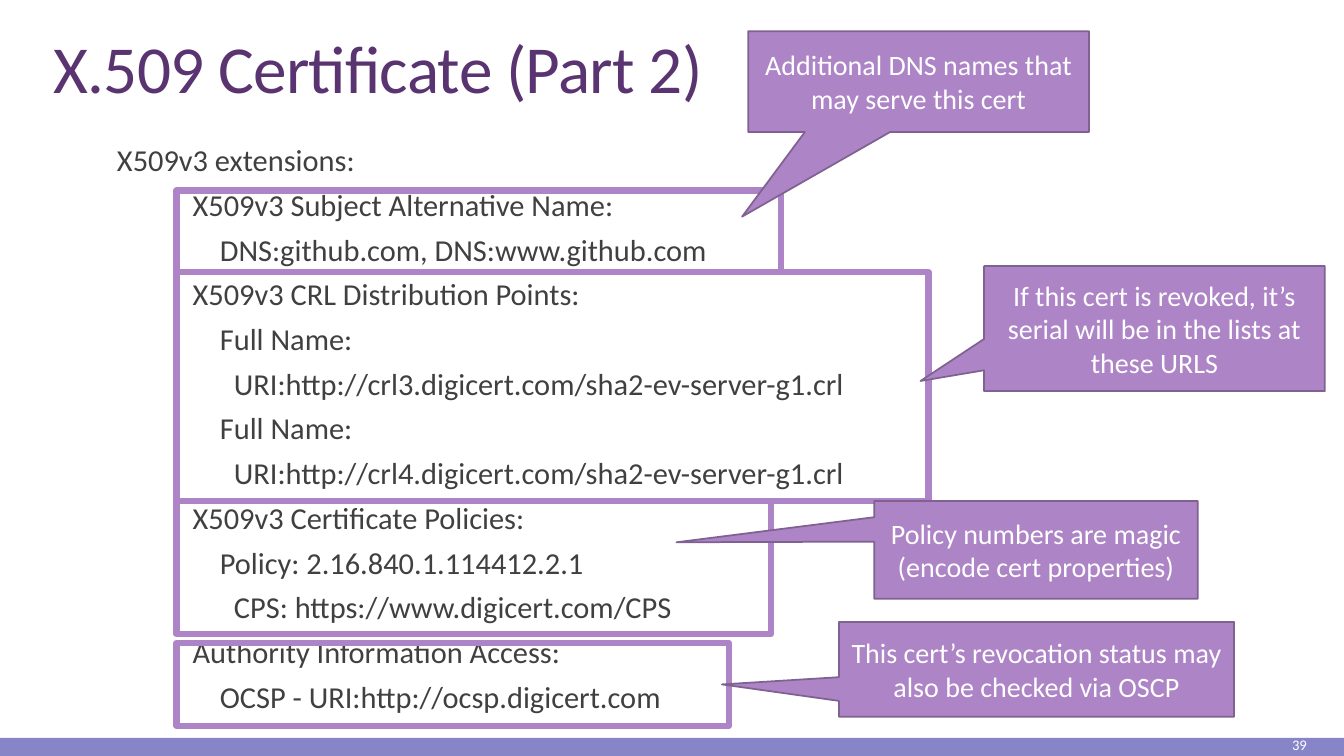
"""Build the slide on the extensions of an X.509 certificate."""
from pptx import Presentation
from pptx.dml.color import RGBColor
from pptx.enum.shapes import MSO_SHAPE
from pptx.enum.text import MSO_ANCHOR, MSO_AUTO_SIZE, PP_ALIGN
from pptx.oxml.ns import qn
from pptx.util import Inches, Pt
from lxml.etree import SubElement

TITLE = "X.509 Certificate (Part 2)"
PAGE_NUMBER = "39"
FONT = "Calibri"
BAND, LILAC, LILAC_EDGE = "8784C7", "AD84C6", "806292"
TITLE_COLOR, BODY_COLOR, WHITE = "5A3471", "404040", "FFFFFF"

LEVEL_INDENTS = (0.07, 0.82, 1.09, 1.23)
CERTIFICATE_LINES = [
    (0, "X509v3 extensions:"),
    (1, "X509v3 Subject Alternative Name:"),
    (2, "DNS:github.com, DNS:www.github.com"),
    (1, "X509v3 CRL Distribution Points:"),
    (2, "Full Name:"),
    (3, "URI:http://crl3.digicert.com/sha2-ev-server-g1.crl"),
    (2, "Full Name:"),
    (3, "URI:http://crl4.digicert.com/sha2-ev-server-g1.crl"),
    (1, "X509v3 Certificate Policies:"),
    (2, "Policy: 2.16.840.1.114412.2.1"),
    (3, "CPS: https://www.digicert.com/CPS"),
    (1, "Authority Information Access:"),
    (2, "OCSP - URI:http://ocsp.digicert.com"),
]
FRAME_LEFT = 1.75
FRAMES = [(1.89, 6, 0.81), (2.7, 7.46, 2.27), (4.97, 5.9, 1.32), (6.38, 5.48, 0.82)]
CALLOUTS = [
    ("Additional DNS names that may serve this cert",
     (7.42, 0.31, 3.38, 1), (7.36, 2.15)),
    ("If this cert is revoked, it’s serial will be in the lists at these URLS",
     (9.76, 2.64, 3.38, 1.24), (9.13, 3.78)),
    ("Policy numbers are magic (encode cert properties)",
     (8.67, 4.97, 3.21, 0.97), (6.71, 5.38)),
    ("This cert’s revocation status may also be checked via OSCP",
     (8.32, 6.17, 3.92, 0.94), (7.16, 6.79)),
]


def color(hex_string):
    return RGBColor.from_string(hex_string)


def place(shape, left, top, width, height):
    shape.left, shape.top = Inches(left), Inches(top)
    shape.width, shape.height = Inches(width), Inches(height)


def format_runs(paragraph, size, hex_string, alignment):
    paragraph.alignment = alignment
    for run in paragraph.runs:
        run.font.name = FONT
        run.font.size = Pt(size)
        run.font.color.rgb = color(hex_string)


def add_box(slide, kind, box, fill=None, line=None, line_width=0):
    shape = slide.shapes.add_shape(kind, *map(Inches, box))
    shape.shadow.inherit = False
    if fill:
        shape.fill.solid()
        shape.fill.fore_color.rgb = color(fill)
    else:
        shape.fill.background()
    if line:
        shape.line.color.rgb = color(line)
        shape.line.width = Pt(line_width)
    else:
        shape.line.fill.background()
    return shape


def fill_title(title):
    place(title, 0.43, 0.31, 12.64, 0.8)
    frame = title.text_frame
    frame.text = TITLE
    frame.auto_size = MSO_AUTO_SIZE.NONE
    frame.vertical_anchor = MSO_ANCHOR.BOTTOM
    paragraph = frame.paragraphs[0]
    paragraph.line_spacing = 0.85
    format_runs(paragraph, 48, TITLE_COLOR, PP_ALIGN.LEFT)
    paragraph.runs[0].font._element.set("spc", "-50")


def fill_body(body):
    place(body, 1.09, 1.45, 10.41, 5.85)
    frame = body.text_frame
    frame.text = "\n".join(text for _, text in CERTIFICATE_LINES)
    frame.auto_size = MSO_AUTO_SIZE.NONE
    frame.vertical_anchor = MSO_ANCHOR.TOP
    frame.margin_left = frame.margin_right = 0
    for index, (level, _) in enumerate(CERTIFICATE_LINES):
        paragraph = frame.paragraphs[index]
        properties = paragraph._p.get_or_add_pPr()
        properties.set("marL", str(Inches(LEVEL_INDENTS[level])))
        properties.set("indent", "0")
        SubElement(properties, qn("a:buNone"))
        paragraph.line_spacing = 0.7
        paragraph.space_before = Pt(11.7 if index else 0)
        paragraph.space_after = Pt(2)
        format_runs(paragraph, 21.7, BODY_COLOR, PP_ALIGN.LEFT)


def add_page_number(slide):
    frame = slide.shapes.add_textbox(*map(Inches, (11.63, 7.32, 1.43, 0.14))).text_frame
    frame.word_wrap = True
    frame.margin_top = frame.margin_bottom = 0
    frame.vertical_anchor = MSO_ANCHOR.MIDDLE
    frame.text = PAGE_NUMBER
    format_runs(frame.paragraphs[0], 10.5, WHITE, PP_ALIGN.RIGHT)


def add_callout(slide, text, box, tip):
    callout = add_box(slide, MSO_SHAPE.RECTANGULAR_CALLOUT, box, LILAC, LILAC_EDGE, 1.25)
    left, top, width, height = box
    callout.adjustments[0] = (tip[0] - left) / width - 0.5
    callout.adjustments[1] = (tip[1] - top) / height - 0.5
    frame = callout.text_frame
    frame.word_wrap = True
    frame.vertical_anchor = MSO_ANCHOR.MIDDLE
    frame.text = text
    format_runs(frame.paragraphs[0], 20, WHITE, PP_ALIGN.CENTER)


def main():
    presentation = Presentation()
    presentation.slide_width, presentation.slide_height = Inches(13.33), Inches(7.5)
    slide = presentation.slides.add_slide(presentation.slide_layouts[1])
    fill_title(slide.shapes.title)
    fill_body(slide.placeholders[1])
    add_box(slide, MSO_SHAPE.RECTANGLE, (0, 7.32, 13.33, 0.18), BAND)
    add_page_number(slide)
    for top, width, height in FRAMES:
        add_box(slide, MSO_SHAPE.RECTANGLE, (FRAME_LEFT, top, width, height),
                line=LILAC, line_width=4.5)
    for text, box, tip in CALLOUTS:
        add_callout(slide, text, box, tip)
    presentation.save("out.pptx")


if __name__ == "__main__":
    main()
